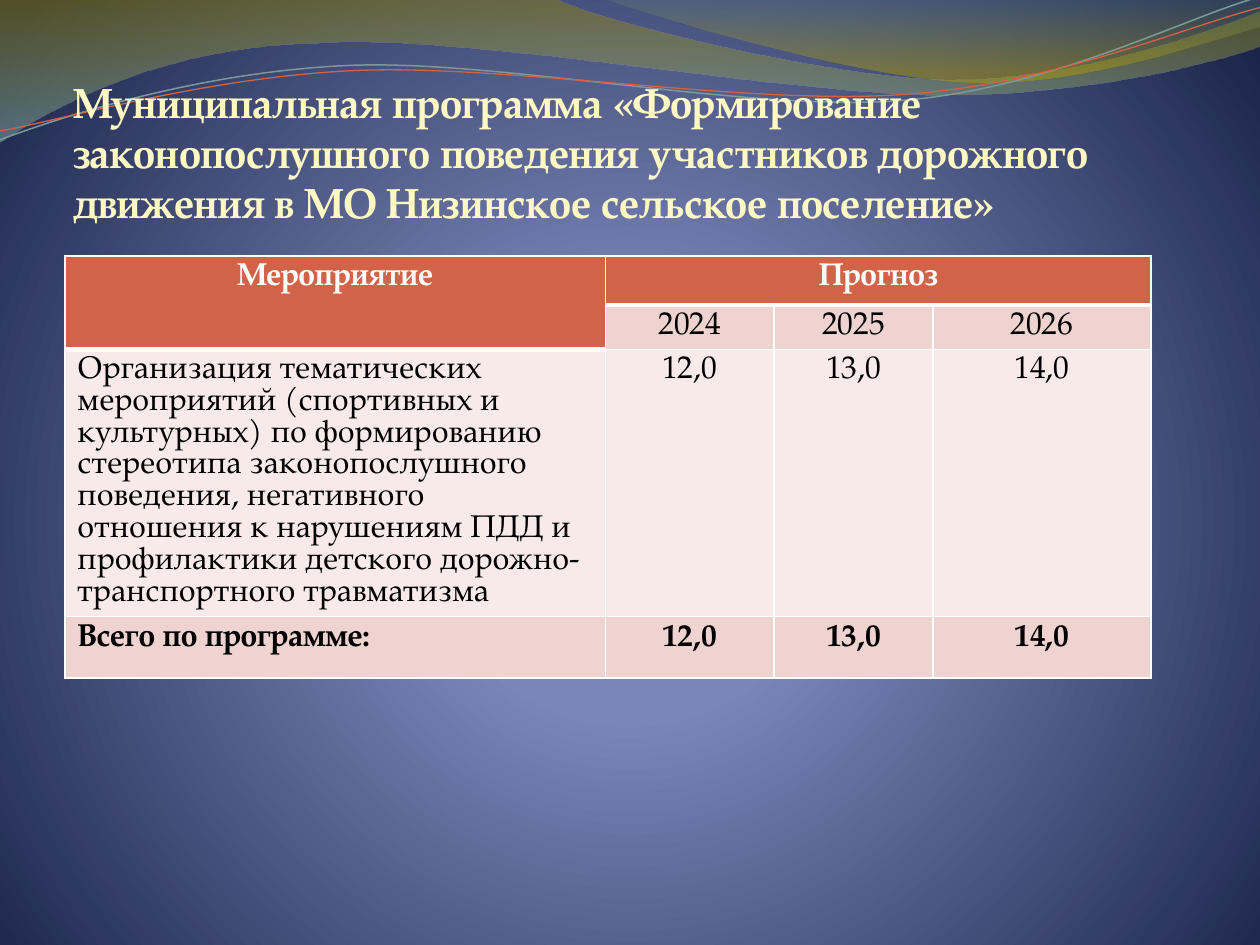
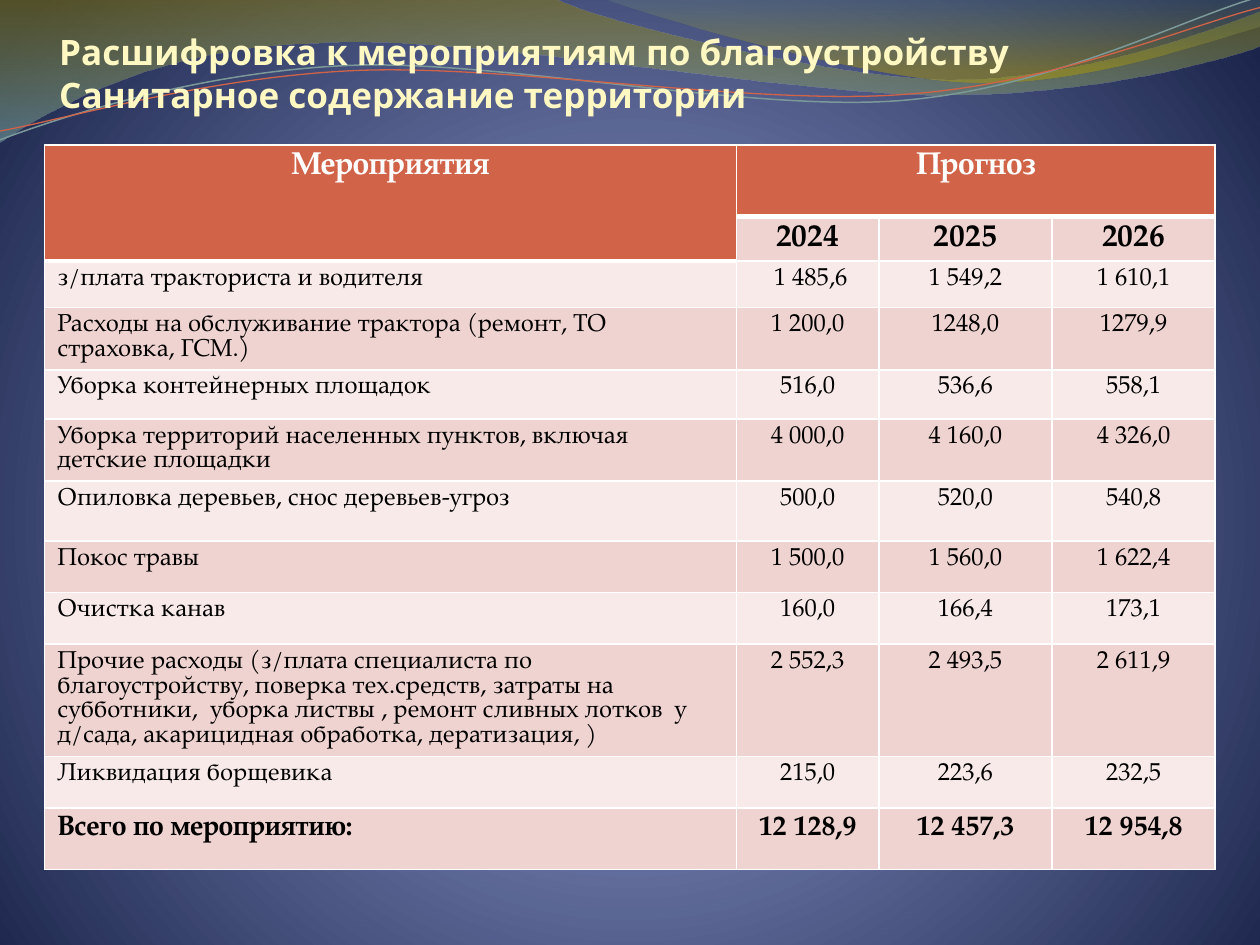
from pptx import Presentation
from pptx.dml.color import RGBColor
from pptx.enum.text import MSO_ANCHOR, PP_ALIGN
from pptx.oxml import parse_xml
from pptx.oxml.ns import nsdecls, qn
from pptx.util import Inches, Pt

# Shared style
SERIF, SANS = "TeX Gyre Pagella", "Noto Sans"
WHITE, BLACK, CREAM = "FFFFFF", "000000", "FFF8C2"
HEADER, BAND_DARK, BAND_LIGHT = "D16349", "EED3D0", "F7EAE9"
TABLE_PITCH = 1.01

# Wave outlines in inches: a start point, then line ends (one point) or curves (three)
WIDE_WAVE = [
    [(0, 0)], [(4.4, -0.01)],
    [(4.76, 0.17), (6.64, 0.63), (7.58, 0.63)],
    [(8.53, 0.63), (9.58, 0.26), (10, 0.09)], [(10.01, 0.36)],
    [(9.83, 0.44), (8.7, 0.76), (7.46, 0.75)],
    [(6.22, 0.75), (3.82, 0.28), (2.57, 0.34)],
    [(1.29, 0.36), (0.46, 0.83), (-0.01, 1.13)], [(0, 0)],
]
RIGHT_WAVE = [
    [(4.79, -0.01)],
    [(5.09, 0.11), (6.82, 0.62), (7.69, 0.65)],
    [(8.56, 0.69), (9.61, 0.32), (10, 0.21)], [(10, 0)], [(4.79, -0.01)],
]
TEAL_THREAD = [
    [(0, 1.11)],
    [(0.48, 0.93), (1.58, 0.57), (2.77, 0.52)],
    [(3.95, 0.47), (5.93, 0.89), (7.13, 0.8)],
    [(8.33, 0.71), (9.38, 0.15), (9.98, -0.02)],
]
RED_THREAD = [
    [(0, 1.04)],
    [(0.47, 0.96), (1.64, 0.61), (2.83, 0.56)],
    [(4.03, 0.51), (5.97, 0.84), (7.17, 0.75)],
    [(8.36, 0.67), (9.41, 0.21), (10, 0.06)],
]


def color(hex_code):
    return RGBColor.from_string(hex_code)


def gradient(stops, direction):
    """Gradient fill from (position, colour, opacity) stops, in percent."""
    stop_xml = "".join(
        f'<a:gs pos="{position * 1000}"><a:srgbClr val="{hex_code}">'
        f'<a:alpha val="{opacity * 1000}"/></a:srgbClr></a:gs>'
        for position, hex_code, opacity in stops)
    return (f'<a:gradFill {nsdecls("a")} rotWithShape="1">'
            f"<a:gsLst>{stop_xml}</a:gsLst>{direction}</a:gradFill>")


def bend(shape, segments):
    """Join the straight steps of each three-point segment into one cubic curve."""
    steps = iter(list(shape.element.iter(qn("a:lnTo"))))
    for segment in segments:
        first, *others = [next(steps) for _ in segment]
        if others:
            curve = parse_xml(f'<a:cubicBezTo {nsdecls("a")}/>')
            first.addprevious(curve)
            for step in (first, *others):
                curve.append(step[0])
                step.getparent().remove(step)


class Deck:
    """Slides on a grid of 100 columns by 75 rows."""

    def __init__(self):
        self.presentation = Presentation()
        self.presentation.slide_width = Inches(10)
        self.presentation.slide_height = Inches(7.5)
        self.layout = self.presentation.slide_layouts.get_by_name("Title Only")
        self.slide = None

    def column(self, count):
        return round(self.presentation.slide_width * count / 100)

    def row(self, count):
        return round(self.presentation.slide_height * count / 75)

    def add_slide(self):
        self.slide = self.presentation.slides.add_slide(self.layout)

    def background(self):
        circle = ('<a:path path="circle"><a:fillToRect l="10000" t="110000" '
                  'r="10000" b="100000"/></a:path>')
        fill = gradient([(0, "7A88C3", 100), (25, "7A86B9", 100), (100, "1B254B", 100)], circle)
        self.layout.element.cSld.insert(0, parse_xml(
            f'<p:bg {nsdecls("p", "a")}><p:bgPr>{fill}<a:effectLst/></p:bgPr></p:bg>'))

    def freeform(self, outline, closed):
        """Draw an outline and move it to the layout, so every slide shows it."""
        points = [(x * 1000, y * 1000) for segment in outline for x, y in segment]
        builder = self.slide.shapes.build_freeform(*points[0], scale=Inches(1) / 1000)
        builder.add_line_segments(points[1:], close=closed)
        shape = builder.convert_to_shape()
        bend(shape, outline[1:])
        shape.shadow.inherit = False
        shape.fill.background()
        self.layout.shapes.element.append(shape.element)
        return shape

    def wave(self, outline, stops):
        shape = self.freeform(outline, True)
        shape.line.fill.background()
        properties = shape.element.spPr
        fill = parse_xml(gradient(stops, '<a:lin ang="5400000" scaled="0"/>'))
        properties.replace(properties.find(qn("a:noFill")), fill)

    def thread(self, outline, hex_code, width):
        shape = self.freeform(outline, False)
        shape.line.color.rgb = color(hex_code)
        shape.line.width = Pt(width)

    def run(self, paragraph, text, size, hex_code, bold, font=SERIF):
        run = paragraph.add_run()
        run.text = text
        run.font.name = font
        run.font.size = Pt(size)
        run.font.bold = bold
        run.font.color.rgb = color(hex_code)

    def title(self, lines, box, size, font, line_pitch):
        left, top, width, height = box
        shape = self.slide.shapes.title
        shape.left, shape.top = self.column(left), self.row(top)
        shape.width, shape.height = self.column(width), self.row(height)
        frame = shape.text_frame
        frame.margin_left = frame.margin_right = frame.margin_top = frame.margin_bottom = 0
        frame.vertical_anchor = MSO_ANCHOR.BOTTOM
        frame.word_wrap = True
        paragraph = frame.paragraphs[0]
        paragraph.alignment = PP_ALIGN.LEFT
        paragraph.line_spacing = Pt(line_pitch)
        for index, line in enumerate(lines):
            if index:
                paragraph.add_line_break()
            self.run(paragraph, line, size, CREAM, True, font)

    def cell_borders(self, cell, top, bottom):
        for side, width in (("L", 1), ("R", 1), ("T", top), ("B", bottom)):
            cell._tc.get_or_add_tcPr().append(parse_xml(
                f'<a:ln{side} {nsdecls("a")} w="{Pt(width)}"><a:solidFill>'
                f'<a:srgbClr val="{WHITE}"/></a:solidFill></a:ln{side}>'))

    def budget_table(self, corner, widths, heights, heading, items, total,
                     body_size, total_size, bold_years):
        """Two header rows, one row per item and a total row."""
        rows = [[heading, "Прогноз", "", ""], ["", "2024", "2025", "2026"], *items, total]
        table = self.slide.shapes.add_table(
            len(rows), len(widths), self.column(corner[0]), self.row(corner[1]),
            self.column(sum(widths)), self.row(sum(heights))).table
        for table_column, width in zip(table.columns, widths):
            table_column.width = self.column(width)
        for table_row, height in zip(table.rows, heights):
            table_row.height = self.row(height)

        last = len(rows) - 1
        for r, texts in enumerate(rows):
            size = 18 if r < 2 else total_size if r == last else body_size
            bold = r in (0, last) or (r == 1 and bold_years)
            for c, text in enumerate(texts):
                cell = table.cell(r, c)
                is_header = r == 0 or (r, c) == (1, 0)
                below_header = r == (2 if c == 0 else 1)
                self.cell_borders(cell, 3 if below_header else 1, 3 if is_header else 1)
                cell.fill.solid()
                cell.fill.fore_color.rgb = color(
                    HEADER if is_header else BAND_DARK if r % 2 else BAND_LIGHT)
                paragraph = cell.text_frame.paragraphs[0]
                paragraph.line_spacing = Pt(size * TABLE_PITCH)
                paragraph.alignment = PP_ALIGN.CENTER if c or is_header else PP_ALIGN.LEFT
                if text:
                    self.run(paragraph, text, size, WHITE if is_header else BLACK, bold)
        table.cell(0, 0).merge(table.cell(1, 0))
        table.cell(0, 1).merge(table.cell(0, 3))


def main():
    deck = Deck()

    # Slide 1: road safety programme, with the shared background and waves
    deck.add_slide()
    deck.background()
    deck.wave(WIDE_WAVE, [(0, "978500", 45), (100, "77A5A6", 55)])
    deck.wave(RIGHT_WAVE, [(0, "648484", 30), (80, "B49F00", 45)])
    deck.thread(TEAL_THREAD, "7C999A", 0.85)
    deck.thread(RED_THREAD, "D16349", 0.75)
    deck.title(["Муниципальная программа «Формирование законопослушного поведения "
                "участников дорожного движения в МО Низинское сельское поселение»"],
               (5.8, 5.2, 85, 12.8), 24, SERIF, 28.6)
    deck.budget_table(
        (5.15, 20.3), [42.9, 13.4, 12.6, 17.3], [3.9, 3.5, 21.1, 4.9], "Мероприятие",
        [["Организация тематических  мероприятий (спортивных и культурных) по формированию "
          "стереотипа законопослушного поведения, негативного отношения к нарушениям ПДД и "
          "профилактики детского дорожно-транспортного травматизма", "12,0", "13,0", "14,0"]],
        ["Всего по программе:", "12,0", "13,0", "14,0"],
        body_size=18, total_size=18, bold_years=False)

    # Slide 2: upkeep of the territory
    deck.add_slide()
    deck.title(["Расшифровка к мероприятиям по благоустройству",
                "Санитарное содержание территории"],
               (4.7, 5.5, 91.8, 3.7), 20, SANS, 24.6)
    deck.budget_table(
        (3.55, 11.5), [54.9, 11.3, 13.75, 12.95],
        [5.7, 3.5, 3.7, 4.9, 3.9, 4.9, 4.75, 4.1, 4.1, 8.9, 4.1, 4.9], "Мероприятия",
        [["з/плата тракториста и водителя", " 1 485,6", "1 549,2", "1 610,1"],
         ["Расходы на обслуживание трактора (ремонт, ТО страховка, ГСМ.)",
          "1 200,0", "1248,0", "1279,9"],
         ["Уборка контейнерных площадок", "516,0", "536,6", "558,1"],
         ["Уборка территорий населенных пунктов, включая детские площадки",
          "4 000,0", "4 160,0", "4 326,0"],
         ["Опиловка деревьев, снос деревьев-угроз", "500,0", "520,0", "540,8"],
         ["Покос травы", "1 500,0", "1 560,0", "1 622,4"],
         ["Очистка канав", "160,0", "166,4", "173,1"],
         ["Прочие расходы (з/плата специалиста по благоустройству, поверка тех.средств, "
          "затраты на субботники,  уборка листвы , ремонт сливных лотков  у д/сада, "
          "акарицидная обработка, дератизация, )", "2 552,3", "2 493,5", "2 611,9"],
         ["Ликвидация борщевика", "215,0", "223,6", "232,5"]],
        ["Всего по мероприятию:", "12 128,9", "12 457,3", "12 954,8"],
        body_size=14, total_size=16, bold_years=True)

    deck.presentation.save("out.pptx")


if __name__ == "__main__":
    main()
